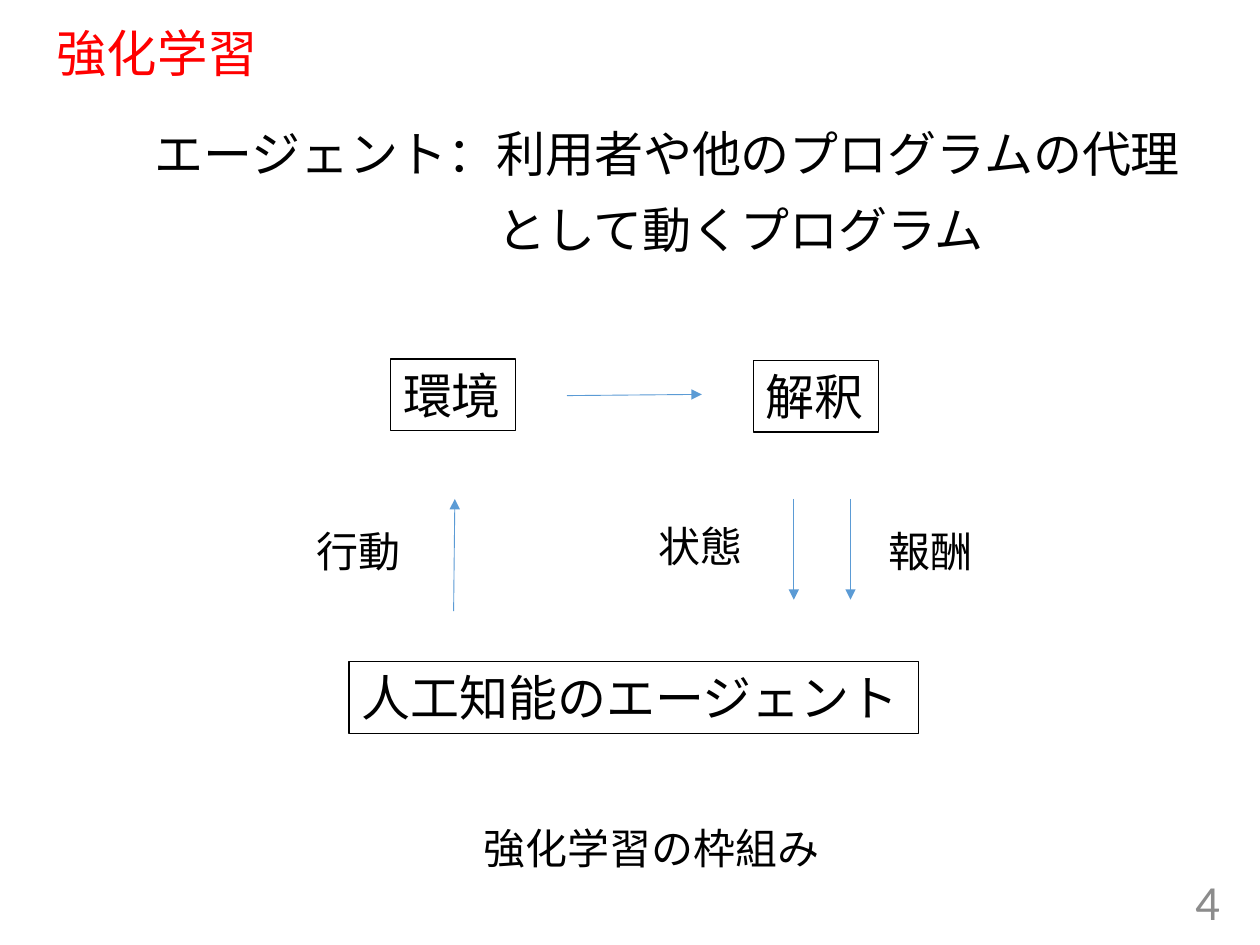
from lxml import etree
from pptx import Presentation
from pptx.dml.color import RGBColor
from pptx.enum.shapes import MSO_CONNECTOR, MSO_SHAPE
from pptx.enum.text import MSO_ANCHOR, PP_ALIGN
from pptx.oxml.ns import qn
from pptx.util import Inches, Pt

STRAIGHT = MSO_CONNECTOR.STRAIGHT
RECTANGLE = MSO_SHAPE.RECTANGLE
TOP, MIDDLE = MSO_ANCHOR.TOP, MSO_ANCHOR.MIDDLE
LEFT, RIGHT = PP_ALIGN.LEFT, PP_ALIGN.RIGHT

COLORS = {"title": "FF0000", "text": "000000", "number": "8C8C8C", "arrow": "5B9BD5"}


def rgb(name):
    return RGBColor.from_string(COLORS[name])


def write(sp, text, size, color="text", font="Calibri", anchor=TOP, align=LEFT, wrap=False):
    tf = sp.text_frame
    tf.word_wrap = wrap
    tf.vertical_anchor = anchor
    tf.text = text
    for p in tf.paragraphs:
        p.alignment = align
        for r in p.runs:
            r.font.size = Pt(size)
            r.font.name = font
            r.font.color.rgb = rgb(color)
    return tf


def add_text(slide, box, text, size, **style):
    sp = slide.shapes.add_textbox(*map(Inches, box))
    return write(sp, text, size, **style)


def add_node(slide, box, text):
    """Outlined box of the diagram."""
    sp = slide.shapes.add_shape(RECTANGLE, *map(Inches, box))
    sp.shadow.inherit = False
    sp.fill.background()
    sp.line.color.rgb = rgb("text")
    sp.line.width = Pt(0.75)
    write(sp, text, 28)


def add_arrow(slide, start, end):
    line = slide.shapes.add_connector(STRAIGHT, *map(Inches, start + end))
    line.line.color.rgb = rgb("arrow")
    line.line.width = Pt(0.5)
    etree.SubElement(line.line._get_or_add_ln(), qn("a:tailEnd"), type="triangle")
    etree.SubElement(line._element.spPr, qn("a:effectLst"))


def add_definition(slide):
    """Agent definition, its second line indented to follow the colon."""
    lines = [("エージェント：利用者や他のプログラムの代理", 0.78), ("として動くプログラム", 3.5)]
    tf = add_text(slide, (0.35, 0.93, 9.25, 1.3), "\n".join(text for text, _ in lines),
                  28, font="Lato", wrap=True)
    for p, (_, indent) in zip(tf.paragraphs, lines):
        p._p.get_or_add_pPr().set("marL", str(Inches(indent)))
    tf.paragraphs[1].space_before = Pt(10)


def add_diagram(slide):
    for box, text in [
        ((3.1, 2.85, 0.99, 0.57), "環境"),
        ((5.98, 2.86, 0.99, 0.57), "解釈"),
        ((2.77, 5.25, 4.52, 0.57), "人工知能のエージェント"),
    ]:
        add_node(slide, box, text)

    for start, end in [
        ((4.5, 3.14), (5.57, 3.13)),
        ((3.6, 4.85), (3.61, 3.96)),
        ((6.3, 3.96), (6.3, 4.76)),
        ((6.75, 3.96), (6.75, 4.76)),
    ]:
        add_arrow(slide, start, end)

    for box, text in [
        ((2.41, 4.12, 0.88, 0.5), "行動"),
        ((5.13, 4.08, 0.88, 0.5), "状態"),
        ((6.95, 4.12, 0.88, 0.5), "報酬"),
        ((3.74, 6.48, 2.89, 0.5), "強化学習の枠組み"),
    ]:
        add_text(slide, box, text, 24)


def main():
    prs = Presentation()
    prs.slide_width, prs.slide_height = Inches(10), Inches(7.5)
    slide = prs.slides.add_slide(prs.slide_layouts[6])
    title = add_text(slide, (0.35, 0.19, 9.25, 0.51), "強化学習", 28.8,
                     color="title", font="Lato", anchor=MIDDLE, wrap=True)
    title.paragraphs[0].line_spacing = 0.9
    add_definition(slide)
    add_diagram(slide)
    add_text(slide, (7.53, 6.95, 2.25, 0.4), "4", 28,
             color="number", anchor=MIDDLE, align=RIGHT, wrap=True)
    prs.save("out.pptx")


if __name__ == "__main__":
    main()
